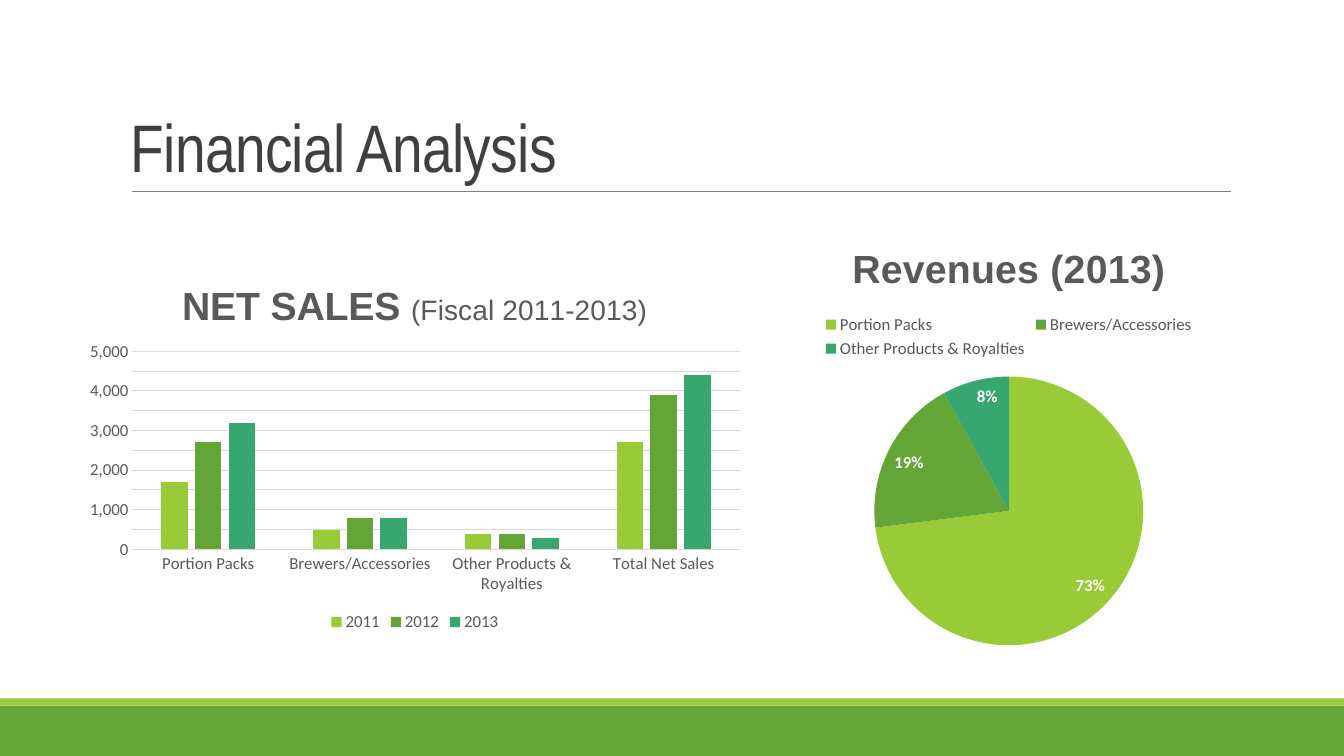
from copy import deepcopy

from lxml import etree
from pptx import Presentation
from pptx import util as u
from pptx.chart.data import CategoryChartData
from pptx.dml.color import RGBColor
from pptx.enum import chart as charts, shapes, text
from pptx.oxml import ns

# Content
TITLE = "Financial Analysis"
PRODUCTS = ["Portion Packs", "Brewers/Accessories", "Other Products & Royalties"]
SALES_CATEGORIES = PRODUCTS + ["Total Net Sales"]
SALES = {
    "2011": (1700, 500, 400, 2700),
    "2012": (2700, 800, 400, 3900),
    "2013": (3200, 800, 300, 4400),
}
REVENUES = {"Series 1": (73, 19, 8)}
# Chart title runs: text, size, bold, letter spacing in hundredths of a point
SALES_TITLE = [("NET SALES ", 28, True, 0), ("(Fiscal 2011-2013)", 20, False, 0)]
REVENUES_TITLE = [("Revenues (2013)", 28, True, 30)]

# Look
GREENS = ["99CB38", "63A537", "37A76F"]
GREY, PALE, DARK, RULE = "595959", "D9D9D9", "404040", "808080"
BANDS = [(7, 0.5, GREENS[1]), (6.93, 0.07, GREENS[0])]  # top, height, colour


def rgb(value):
    return RGBColor.from_string(value)


def paint(fill, colour):
    fill.solid()
    fill.fore_color.rgb = rgb(colour)


def style(font, size, colour, name="Calibri", bold=False):
    font.size = u.Pt(size)
    font.name = name
    font.bold = bold
    font.color.rgb = rgb(colour)


def add_span(para, words, size, colour, name, bold=False, spacing=0):
    span = para.add_run()
    span.text = words
    style(span.font, size, colour, name, bold)
    if spacing:
        span._r.get_or_add_rPr().set("spc", str(spacing))


def add_chart(page, kind, place, categories, series, title, legend_place):
    data = CategoryChartData(number_format="#,##0")
    data.categories = categories
    for name, values in series.items():
        data.add_series(name, values)
    chart = page.shapes.add_chart(kind, *map(u.Inches, place), data).chart
    style(chart.font, 10, "000000")
    chart.has_title = True
    para = chart.chart_title.text_frame.paragraphs[0]
    for words, size, bold, spacing in title:
        add_span(para, words, size, GREY, "Arial", bold, spacing)
    chart.has_legend = True
    chart.legend.position = legend_place
    chart.legend.include_in_layout = False
    style(chart.legend.font, 12, GREY)
    chart.plots[0].vary_by_categories = kind == charts.XL_CHART_TYPE.PIE
    return chart


deck = Presentation()
deck.slide_width, deck.slide_height = u.Inches(13.33), u.Inches(7.5)
page = deck.slides.add_slide(deck.slide_layouts[6])

# Bottom bands
for top, height, colour in BANDS:
    band = page.shapes.add_shape(
        shapes.MSO_SHAPE.RECTANGLE, 0, u.Inches(top), deck.slide_width, u.Inches(height))
    band.shadow.inherit = False
    paint(band.fill, colour)
    band.line.fill.background()

# Heading and the rule under it
rule = page.shapes.add_connector(
    shapes.MSO_CONNECTOR.STRAIGHT, *map(u.Inches, (1.31, 1.9, 12.21, 1.9)))
rule.line.color.rgb = rgb(RULE)
rule.line.width = u.Pt(0.5)
etree.SubElement(rule._element.spPr, ns.qn("a:effectLst"))

heading = page.shapes.add_textbox(*map(u.Inches, (1.2, 0.75, 5.26, 1.15))).text_frame
heading.word_wrap = True
heading.vertical_anchor = text.MSO_ANCHOR.BOTTOM
heading.paragraphs[0].line_spacing = 0.85
add_span(heading.paragraphs[0], TITLE, 48, DARK, "Arial Narrow", spacing=-50)

# Revenue pie
pie = add_chart(page, charts.XL_CHART_TYPE.PIE, (7.49, 2.21, 5.03, 4.33), PRODUCTS,
                REVENUES, REVENUES_TITLE, charts.XL_LEGEND_POSITION.TOP).plots[0]
for index, colour in enumerate(GREENS):
    paint(pie.series[0].points[index].format.fill, colour)
pie.has_data_labels = True
labels = pie.data_labels
labels.show_percentage, labels.show_value = True, False
labels.number_format, labels.number_format_is_linked = "0%", False
labels.position = charts.XL_LABEL_POSITION.INSIDE_END
style(labels.font, 12, "FFFFFF", bold=True)

# Net sales columns
sales = add_chart(page, charts.XL_CHART_TYPE.COLUMN_CLUSTERED, (0.76, 2.66, 6.71, 3.65),
                  SALES_CATEGORIES, SALES, SALES_TITLE, charts.XL_LEGEND_POSITION.BOTTOM)
columns = sales.plots[0]
columns.gap_width, columns.overlap = 219, -27
for series, colour in zip(columns.series, GREENS):
    paint(series.format.fill, colour)

amounts, products = sales.value_axis, sales.category_axis
for axis in (amounts, products):
    axis.major_tick_mark = axis.minor_tick_mark = charts.XL_TICK_MARK.NONE
    style(axis.tick_labels.font, 12, GREY)
amounts.minimum_scale, amounts.maximum_scale = 0, 5000
amounts.major_unit, amounts.minor_unit = 1000, 500
amounts.has_major_gridlines = amounts.has_minor_gridlines = True
amounts.format.line.fill.background()
for lines in (amounts.major_gridlines, products):
    lines.format.line.color.rgb = rgb(PALE)
    lines.format.line.width = u.Pt(0.75)

# Minor gridlines take the look of the major ones
major, minor = (amounts._element.find(ns.qn(f"c:{size}Gridlines")) for size in ("major", "minor"))
minor.append(deepcopy(major.find(ns.qn("c:spPr"))))

deck.save("out.pptx")
